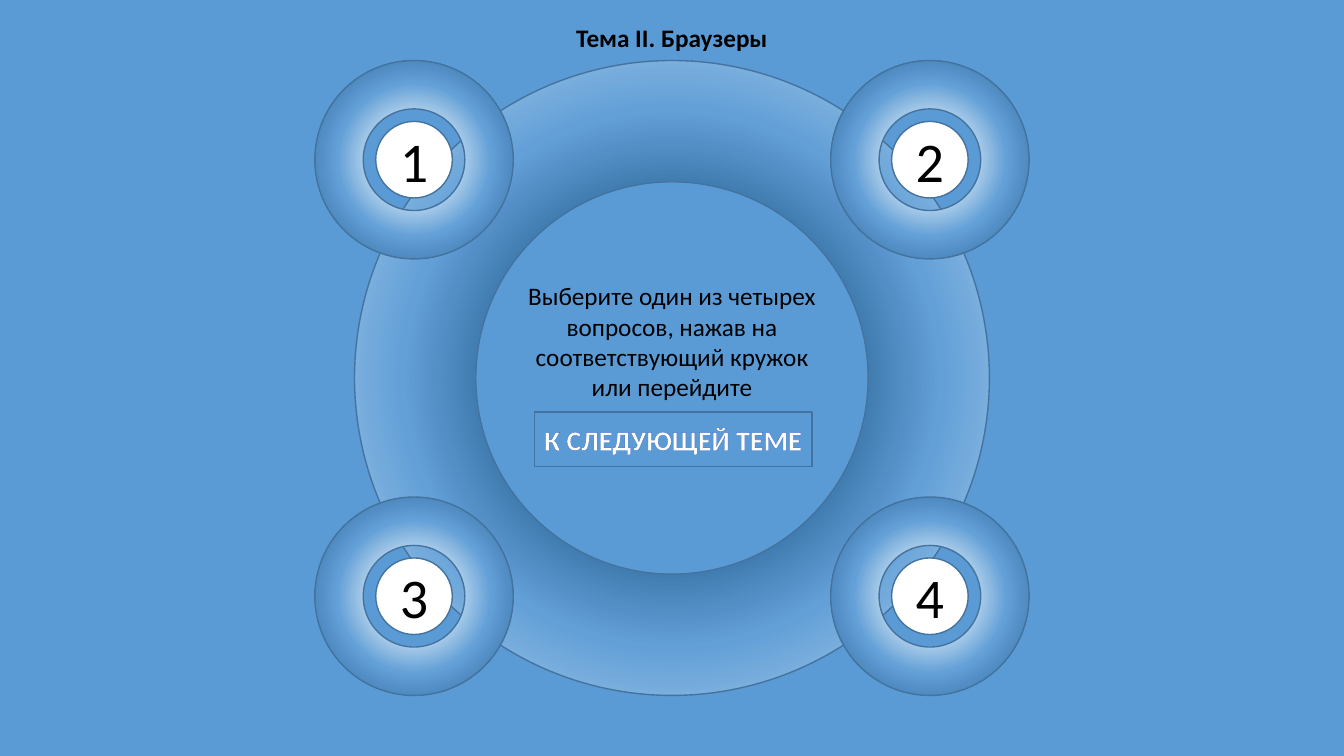
from lxml import etree
from pptx import Presentation
from pptx.dml.color import RGBColor
from pptx.enum.shapes import MSO_SHAPE as Shape
from pptx.enum.text import MSO_ANCHOR as Anchor, PP_ALIGN as Align
from pptx.oxml import parse_xml
from pptx.oxml.ns import nsdecls, qn
from pptx.util import Cm, Pt

# Content
TITLE = "Тема II. Браузеры"
PROMPT = ("Выберите один из четырех вопросов, нажав на "
          "соответствующий кружок или перейдите")
BUTTON = "К СЛЕДУЮЩЕЙ ТЕМЕ"
QUESTIONS = [("1", -1, -1), ("2", 1, -1), ("3", -1, 1), ("4", 1, 1)]  # label, side x, side y

THEME = {
    "font": "Calibri", "body": 18, "button": 20, "number": 40,
    "blue": "5B9BD5", "edge": "43739E", "black": "000000", "white": "FFFFFF",
    "outline": "4472C4",
    "wheel": [(30, "255E91"), (60, "63A0D7"), (100, "BDD7EE")],
    "ring": [(30, "BDD7EE"), (55, "63A0D7"), (100, "255E91")],
}

# Layout in centimetres
PAGE_W, PAGE_H = 33.87, 19.05
CENTER_X, CENTER_Y = PAGE_W / 2, PAGE_H / 2
WHEEL_SIZE, WHEEL_BAND = 16, 0.191
RING_SIZE, HOLE_SIZE, DISC_SIZE = 5, 2.56, 1.93
STEP_X, STEP_Y = 6.5, 5.5

deck = Presentation()
deck.slide_width, deck.slide_height = Cm(PAGE_W), Cm(PAGE_H)
page = deck.slides.add_slide(deck.slide_layouts[6])


def color(name):
    return RGBColor.from_string(THEME[name])


def centered(x, y, width, height):
    return Cm(x - width / 2), Cm(y - height / 2), Cm(width), Cm(height)


def add_figure(kind, x, y, width, height, fill):
    figure = page.shapes.add_shape(kind, *centered(x, y, width, height))
    figure.shadow.inherit = False
    figure.fill.solid()
    figure.fill.fore_color.rgb = color(fill)
    figure.line.color.rgb = color("edge")
    figure.line.width = Pt(1)
    return figure


def add_donut(x, y, size, band, stops):
    donut = add_figure(Shape.DONUT, x, y, size, size, "blue")
    donut.adjustments[0] = band
    marks = "".join(f'<a:gs pos="{pos * 1000}"><a:srgbClr val="{tone}"/></a:gs>'
                    for pos, tone in THEME[stops])
    gradient = parse_xml(
        f'<a:gradFill {nsdecls("a")} rotWithShape="1"><a:gsLst>{marks}</a:gsLst>'
        '<a:path path="circle"><a:fillToRect l="50000" t="50000" r="50000" b="50000"/>'
        '</a:path></a:gradFill>')
    solid = donut.fill._xPr.find(qn("a:solidFill"))
    solid.getparent().replace(solid, gradient)


def write(box, text, size, tone="black", bold=False, wrap=True, anchor=Anchor.MIDDLE):
    frame = box.text_frame
    frame.word_wrap = wrap
    frame.vertical_anchor = anchor
    para = frame.paragraphs[0]
    para.text = text
    para.alignment = Align.CENTER
    para.font.name, para.font.size = THEME["font"], Pt(THEME[size])
    para.font.bold, para.font.color.rgb = bold, color(tone)
    return para


# Background and central wheel
page.background.fill.solid()
page.background.fill.fore_color.rgb = color("blue")
add_donut(CENTER_X, CENTER_Y, WHEEL_SIZE, WHEEL_BAND, "wheel")

# Numbered question rings
for label, side_x, side_y in QUESTIONS:
    x, y = CENTER_X + side_x * STEP_X, CENTER_Y + side_y * STEP_Y
    add_donut(x, y, RING_SIZE, (RING_SIZE - HOLE_SIZE) / 2 / RING_SIZE, "ring")
    disc = add_figure(Shape.OVAL, x, y, DISC_SIZE, DISC_SIZE, "white")
    write(disc, label, "number", wrap=False)

# Prompt and title
prompt_box = page.shapes.add_textbox(*centered(CENTER_X, 8.6, 8, 3.33))
write(prompt_box, PROMPT, "body")
title_box = page.shapes.add_textbox(*centered(CENTER_X, 1, 32, 0.94))
title = write(title_box, TITLE, "body", bold=True, anchor=Anchor.TOP)
title.line_spacing = 0.9

# Button to the next topic, with outlined letters
button = add_figure(Shape.ACTION_BUTTON_CUSTOM, CENTER_X + 0.03, 11.07, 7, 1.37, "blue")
span = write(button, BUTTON, "button", tone="white", bold=True, wrap=False).runs[0]
outline = etree.Element(qn("a:ln"), w=str(Pt(0.8)))
paint = etree.SubElement(outline, qn("a:solidFill"))
etree.SubElement(paint, qn("a:srgbClr"), val=THEME["outline"])
span.font._element.insert(0, outline)

deck.save("out.pptx")
